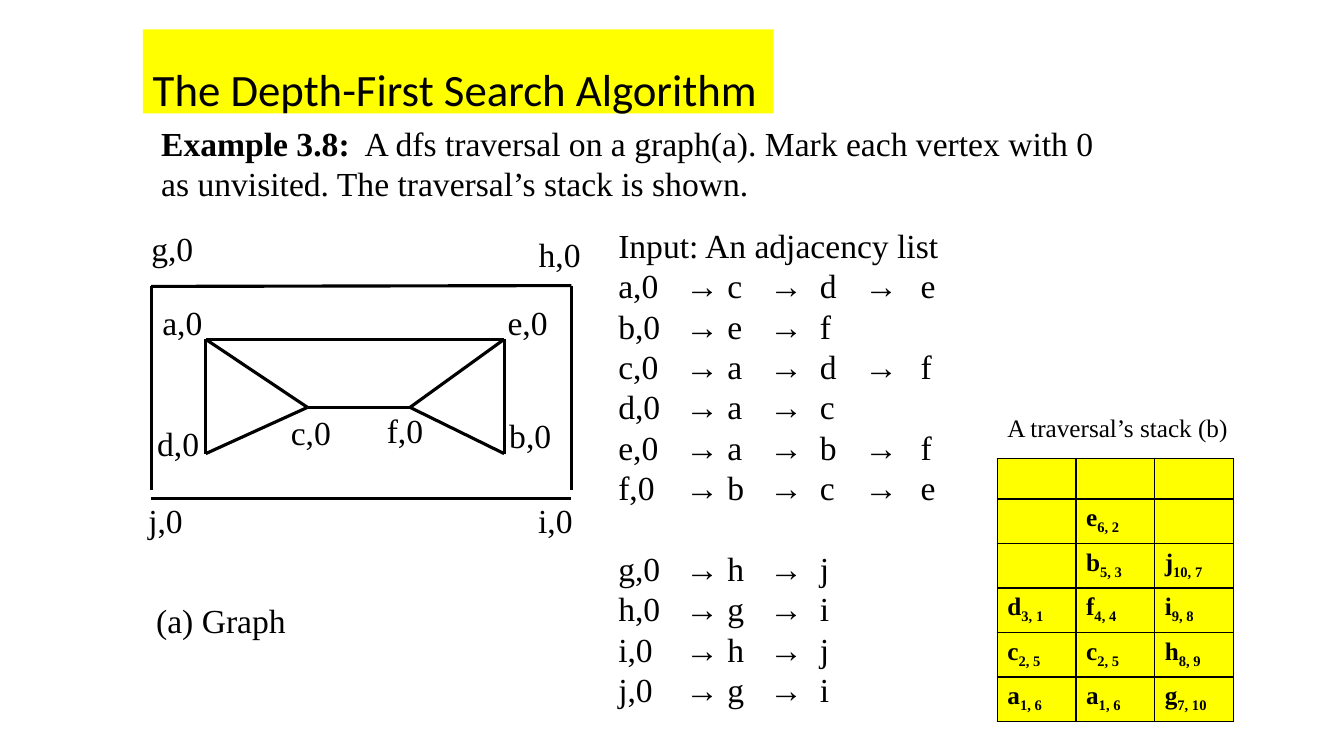
"""Build a slide on depth-first search with a graph, its adjacency list and its stack."""
from lxml.etree import SubElement as Sub
from pptx import Presentation
from pptx.dml.color import RGBColor as RGB
from pptx.enum.shapes import MSO_CONNECTOR as Link
from pptx.enum.text import PP_ALIGN as Align
from pptx.oxml.ns import qn
from pptx.util import Inches, Pt

BLACK = RGB(0, 0, 0)
YELLOW = RGB(255, 255, 0)
SERIF = "Times New Roman"

deck = Presentation()
deck.slide_width, deck.slide_height = Inches(13.33), Inches(7.5)
slide = deck.slides.add_slide(deck.slide_layouts[6])
unit = deck.slide_height / 90


def grid(*cells):
    return [round(cell * unit) for cell in cells]


def write(x, y, wide, high, lines, size=24, face=SERIF, wrap=True):
    box = slide.shapes.add_textbox(*grid(x, y, wide, high))
    frame = box.text_frame
    frame.word_wrap = wrap
    frame.text = "\n".join(lines)
    for para in frame.paragraphs:
        para.font.size, para.font.name = Pt(size), face
        para.font.color.rgb = BLACK
    return box


intro = write(18, 14, 116, 10.9, ["Example 3.8:"])
lead = intro.text_frame.paragraphs[0]
lead.runs[0].font.bold = True
lead.add_run().text = (
    "  A dfs traversal on a graph(a). Mark each vertex with 0 "
    "as unvisited. The traversal’s stack is shown."
)

links = {
    "a": "cde", "b": "ef", "c": "adf", "d": "ac", "e": "abf",
    "f": "bce", "g": "hj", "h": "gi", "i": "hj", "j": "gi",
}
nodes = {
    "a": (24.5, 40.4), "b": (60, 54), "c": (36.6, 48.5), "d": (24.5, 54),
    "e": (60, 40.4), "f": (48.8, 48.5), "g": (18, 34.1), "h": (68, 34),
    "i": (68, 59.3), "j": (18, 59.3),
}
shifts = {
    "a": (-2.8, -5), "b": (3.1, -5.2), "c": (0.4, -0.1), "d": (-3.3, -4.2),
    "e": (2.8, -5), "f": (-0.6, -0.3), "g": (2.5, -7.6), "h": (-1.4, -6.8),
    "i": (-1.9, -0.4), "j": (1.7, -0.4),
}

for start, ends in links.items():
    x, y = nodes[start]
    for end in ends:
        if start < end:
            far, low = nodes[end]
            gap = 1 if start + end in ("gj", "hi") else 0
            edge = slide.shapes.add_connector(Link.STRAIGHT, *grid(x, y, far, low - gap))
            edge.line.color.rgb, edge.line.width = BLACK, Pt(2.25)
            Sub(edge._element.spPr, qn("a:effectLst"))
    right, down = shifts[start]
    label = write(x + right - 3.9, y + down, 7.8, 6, [f"{start},0"])
    label.text_frame.paragraphs[0].alignment = Align.CENTER

rows = ["\t".join([f"{start},0"] + [f"→\t{end}" for end in ends]) for start, ends in links.items()]
listing = write(72.4, 26.2, 50.5, 59.4, ["Input: An adjacency list"] + rows)
for para in listing.text_frame.paragraphs[1:]:
    if para.text.startswith("g"):
        para.space_before = Pt(29)
    stops = Sub(para._p.get_or_add_pPr(), qn("a:tabLst"))
    for stop in grid(8, 13, 18, 24, 29.3, 36):
        Sub(stops, qn("a:tab"), pos=str(stop), algn="l")
    para.font._element.addprevious(stops)

stack = [
    ["", "", ""],
    ["", "e6, 2", ""],
    ["", "b5, 3", "j10, 7"],
    ["d3, 1", "f4, 4", "i9, 8"],
    ["c2, 5", "c2, 5", "h8, 9"],
    ["a1, 6", "a1, 6", "g7, 10"],
]
table = slide.shapes.add_table(6, 3, *grid(118.7, 54.6, 28.1, 28.8)).table
table.first_row = table.horz_banding = False
for row, names in enumerate(stack):
    for col, name in enumerate(names):
        cell = table.cell(row, col)
        para = cell.text_frame.paragraphs[0]
        para.font.size, para.font.name, para.font.bold = Pt(18), SERIF, True
        para.font.color.rgb = BLACK
        if name:
            para.add_run().text = name[0]
            mark = para.add_run()
            mark.text = name[1:]
            mark.font._element.set("baseline", "-25000")
        props = cell._tc.get_or_add_tcPr()
        for side in ("lnL", "lnR", "lnT", "lnB"):
            line = Sub(props, qn(f"a:{side}"), w=str(Pt(1)))
            Sub(Sub(line, qn("a:solidFill")), qn("a:srgbClr"), val=str(BLACK))
        cell.fill.solid()
        cell.fill.fore_color.rgb = YELLOW

write(17.4, 70.8, 19.1, 6, ["(a) Graph"], wrap=False)
title = write(17, 3.5, 75.1, 10, ["The Depth-First Search Algorithm"], 32, "Calibri", False)
title.text_frame.paragraphs[0].line_spacing = 1.5
title.fill.solid()
title.fill.fore_color.rgb = YELLOW
write(118.7, 48.5, 29.6, 4.8, ["A traversal’s stack (b)"], 18, wrap=False)

deck.save("out.pptx")
